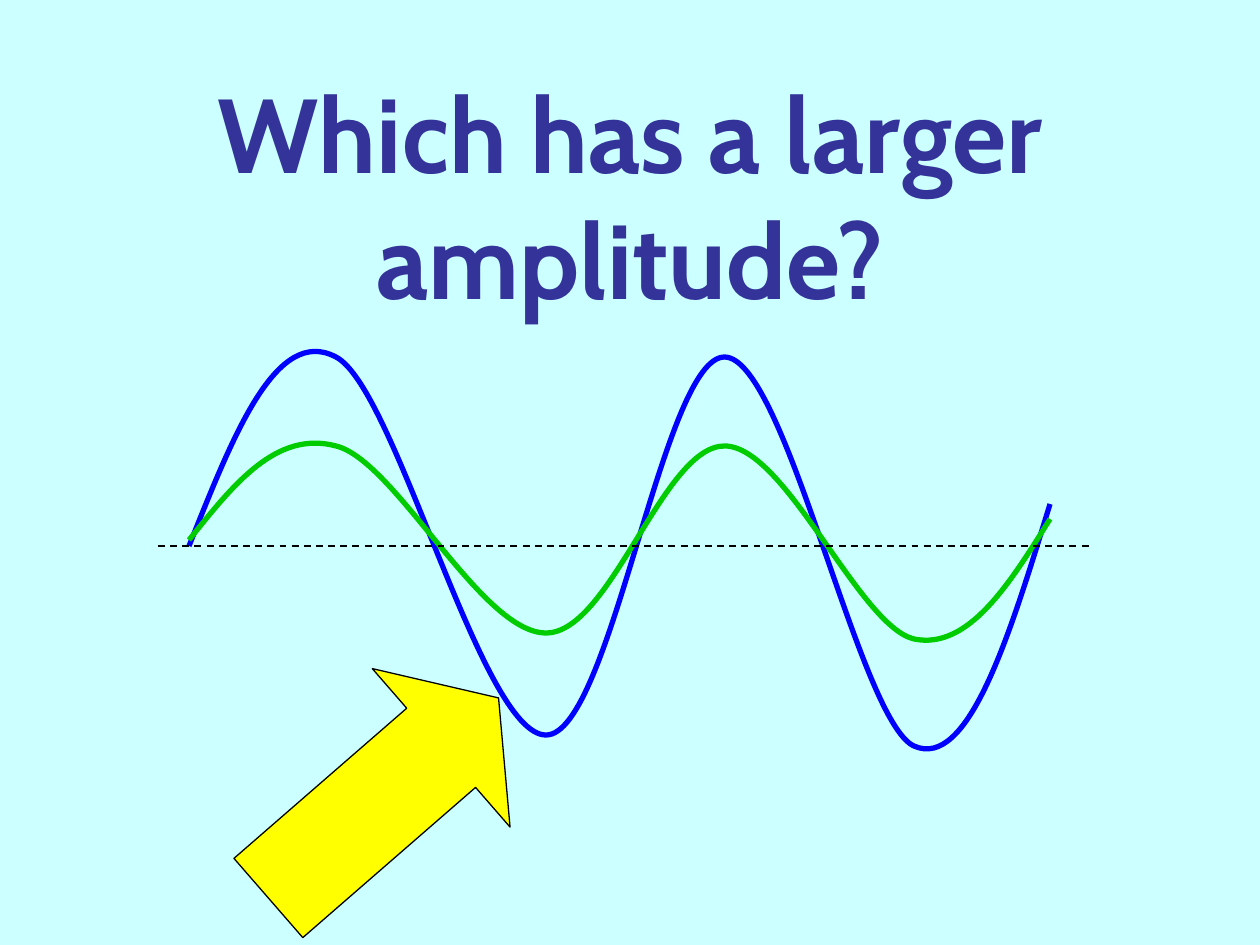
import pptx
import pptx.dml.color
import pptx.enum.dml
import pptx.enum.shapes
import pptx.enum.text
import pptx.oxml
import pptx.oxml.ns
import pptx.util
from dataclasses import dataclass

EMU_PER_PX = 914400 / 126


def px(n):
    return pptx.util.Emu(round(n * EMU_PER_PX))


def rgb(color):
    return pptx.dml.color.RGBColor.from_string(color)


@dataclass(frozen=True)
class Theme:
    font: str = "Cabin"
    title_size: int = 60
    background: str = "CCFFFF"
    title: str = "333399"
    large_wave: str = "0000FF"
    small_wave: str = "00CC00"
    axis: str = "000000"
    arrow: str = "FFFF00"


class Deck:
    def __init__(self, theme, width, height):
        self.theme = theme
        self.prs = pptx.Presentation()
        self.prs.slide_width, self.prs.slide_height = px(width), px(height)
        self.s = None

    def add_slide(self):
        self.s = self.prs.slides.add_slide(self.prs.slide_layouts[5])
        fill = self.s.background.fill
        fill.solid()
        fill.fore_color.rgb = rgb(self.theme.background)

    def title(self, text, x, y, w, h):
        sp = self.s.shapes.title
        sp.left, sp.top, sp.width, sp.height = map(px, (x, y, w, h))
        tf = sp.text_frame
        tf.text = text
        tf.word_wrap = True
        tf.auto_size = pptx.enum.text.MSO_AUTO_SIZE.NONE
        tf.vertical_anchor = pptx.enum.text.MSO_ANCHOR.MIDDLE
        p = tf.paragraphs[0]
        p.alignment = pptx.enum.text.PP_ALIGN.CENTER
        p.font.name = self.theme.font
        p.font.size = pptx.util.Pt(self.theme.title_size)
        p.font.bold = True
        p.font.color.rgb = rgb(self.theme.title)

    def curve(self, points, color, width):
        """Draw a Bezier curve: a start, then two handles and an end per segment."""
        builder = self.s.shapes.build_freeform(*points[0], scale=EMU_PER_PX)
        builder.add_line_segments(points[1:], close=False)
        sp = builder.convert_to_shape()
        sp.shadow.inherit = False
        sp.fill.background()
        self.outline(sp, color, width)
        lines = sp.element.findall(".//" + pptx.oxml.ns.qn("a:lnTo"))
        for i in range(0, len(lines), 3):
            bezier = pptx.oxml.parse_xml(
                f"<a:cubicBezTo {pptx.oxml.ns.nsdecls('a')}/>")
            lines[i].addprevious(bezier)
            for line in lines[i:i + 3]:
                bezier.append(line[0])
                line.getparent().remove(line)

    def dashed_line(self, x1, y1, x2, y2, color, width):
        line = self.s.shapes.add_connector(
            pptx.enum.shapes.MSO_CONNECTOR.STRAIGHT, *map(px, (x1, y1, x2, y2)))
        self.outline(line, color, width)
        line.line.dash_style = pptx.enum.dml.MSO_LINE.DASH
        line.element.spPr.append(pptx.oxml.parse_xml(
            f"<a:effectLst {pptx.oxml.ns.nsdecls('a')}/>"))

    def right_arrow(self, x, y, w, h, rotation, head):
        sp = self.s.shapes.add_shape(
            pptx.enum.shapes.MSO_SHAPE.RIGHT_ARROW, *map(px, (x, y, w, h)))
        sp.rotation = rotation
        sp.adjustments[1] = head
        sp.shadow.inherit = False
        sp.fill.solid()
        sp.fill.fore_color.rgb = rgb(self.theme.arrow)
        self.outline(sp, self.theme.axis, 0.75)

    @staticmethod
    def outline(shape, color, width):
        shape.line.color.rgb = rgb(color)
        shape.line.width = pptx.util.Pt(width)


WAVE = [
    (189, 546),
    (233, 436), (276, 325), (336, 357),
    (396, 388), (481, 735), (546, 735),
    (611, 735), (663, 355), (725, 357),
    (786, 359), (859, 721), (914, 746),
    (968, 770), (1009, 638), (1050, 504),
]


def flatten(points, ratio, old_crest, new_crest):
    """Scale the heights of a wave and move its crest to a new level."""
    return [(x, round(new_crest + (y - old_crest) * ratio)) for x, y in points]


def main():
    theme = Theme()
    deck = Deck(theme, 1260, 945)
    deck.add_slide()
    deck.title("Which has a larger amplitude?", 63, 116, 1134, 158)
    deck.curve(WAVE, theme.large_wave, 3)
    deck.curve(flatten(WAVE, 0.495, 357, 446), theme.small_wave, 3)
    deck.dashed_line(158, 546, 1092, 546, theme.axis, 1)
    deck.right_arrow(231, 693, 305, 210, rotation=319, head=0.362)
    deck.prs.save("out.pptx")


if __name__ == "__main__":
    main()
